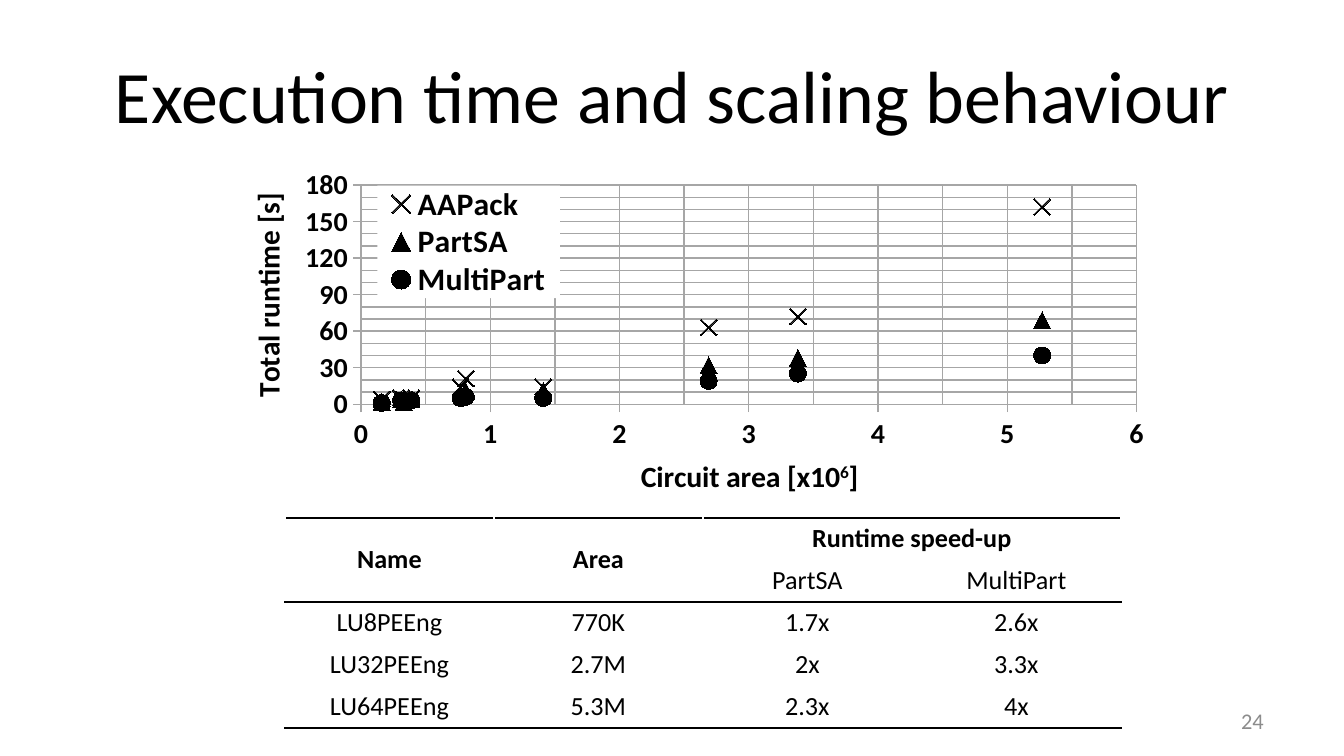
from copy import deepcopy
from dataclasses import dataclass

from lxml.etree import SubElement
from pptx import Presentation
from pptx.chart.data import XyChartData
from pptx.dml.color import RGBColor
from pptx.enum.chart import XL_CHART_TYPE as ChartType, XL_LEGEND_POSITION as LegendPosition
from pptx.enum.chart import XL_MARKER_STYLE as MarkerStyle
from pptx.enum.text import MSO_ANCHOR as Anchor, PP_ALIGN as Align
from pptx.oxml import parse_xml
from pptx.oxml.ns import nsdecls, qn
from pptx.util import Emu, Pt


@dataclass(frozen=True)
class Theme:
    """Colours, font and type sizes of the slide."""

    font: str = "Calibri"
    ink: str = "000000"
    paper: str = "FFFFFF"
    muted: str = "8C8C8C"
    grid: str = "A6A6A6"
    title: float = 39.6
    page: int = 12
    table: int = 14
    ticks: int = 15
    axis_title: int = 16
    legend: int = 17
    marker: int = 9
    grid_width: float = 0.75
    rule_width: int = 1


THEME = Theme()
AREAS = [0.16, 0.31, 0.33, 0.39, 0.77, 0.81, 1.41, 2.69, 3.38, 5.27]
RUNTIMES = [
    ("AAPack", MarkerStyle.X, [4, 5, 4, 5, 14, 21, 14, 63, 72, 162]),
    ("PartSA", MarkerStyle.TRIANGLE, [2, 4, 2, 4, 9, 11, 11, 32, 38, 69]),
    ("MultiPart", MarkerStyle.CIRCLE, [1, 3, 2, 3, 5, 6, 5, 19, 25, 40]),
]
SPEEDUPS = [
    ["Name", "Area", "Runtime speed-up", ""],
    ["", "", "PartSA", "MultiPart"],
    ["LU8PEEng", "770K", "1.7x", "2.6x"],
    ["LU32PEEng", "2.7M", "2x", "3.3x"],
    ["LU64PEEng", "5.3M", "2.3x", "4x"],
]


def px(length):
    """Turn pixels into EMU."""
    return Emu(round(length * 914400 / 134.4))


def style_font(font, size, color=THEME.ink, bold=False):
    """Apply the theme font with a size, colour and weight."""
    font.name = THEME.font
    font.size = Pt(size)
    font.bold = bold
    font.color.rgb = RGBColor.from_string(color)


def write(text_frame, text, size, align, color=THEME.ink, bold=False):
    """Fill a text frame with one styled paragraph."""
    text_frame.text = text
    paragraph = text_frame.paragraphs[0]
    paragraph.alignment = align
    for run in paragraph.runs:
        style_font(run.font, size, color, bold)


def add_text(slide, box, text, size, align, color=THEME.ink):
    """Add a vertically centred text box."""
    text_frame = slide.shapes.add_textbox(*map(px, box)).text_frame
    text_frame.word_wrap = True
    text_frame.vertical_anchor = Anchor.MIDDLE
    write(text_frame, text, size, align, color)


def set_layout(element, index, inner=False, **fractions):
    """Place a chart part by fractions of the chart area."""
    for old_layout in element.findall(qn("c:layout")):
        element.remove(old_layout)
    layout = parse_xml(f"<c:layout {nsdecls('c')}><c:manualLayout/></c:layout>")
    manual = layout[0]
    if inner:
        SubElement(manual, qn("c:layoutTarget")).set("val", "inner")
    for name in ("xMode", "yMode"):
        SubElement(manual, qn(f"c:{name}")).set("val", "edge")
    for name, value in fractions.items():
        SubElement(manual, qn(f"c:{name}")).set("val", str(value))
    element.insert(index, layout)


def style_line(line, color=THEME.grid):
    """Give a chart line the grid weight and a colour."""
    line.width = Pt(THEME.grid_width)
    line.color.rgb = RGBColor.from_string(color)


def style_axis(axis, title, maximum, major, minor, x, y, superscript=""):
    """Set scale, gridlines, labels and title of an axis."""
    axis.minimum_scale, axis.maximum_scale = 0, maximum
    axis.major_unit, axis.minor_unit = major, minor
    axis.has_major_gridlines = axis.has_minor_gridlines = True
    for part in (axis, axis.major_gridlines):
        style_line(part.format.line)
    grid_style = axis._element.find(qn("c:majorGridlines")).find(qn("c:spPr"))
    axis._element.find(qn("c:minorGridlines")).append(deepcopy(grid_style))
    axis.tick_labels.number_format = "#,##0"
    axis.tick_labels.number_format_is_linked = False
    style_font(axis.tick_labels.font, THEME.ticks, bold=True)
    text_frame = axis.axis_title.text_frame
    write(text_frame, title, THEME.axis_title, Align.CENTER, bold=True)
    if superscript:
        paragraph = text_frame.paragraphs[0]
        for text, baseline in ((superscript, "30000"), ("]", "0")):
            run = paragraph.add_run()
            run.text = text
            style_font(run.font, THEME.axis_title, bold=True)
            run._r.get_or_add_rPr().set("baseline", baseline)
    set_layout(axis.axis_title._element, 1, x=x, y=y)


def style_legend(chart):
    """Lay a white legend over the plot."""
    chart.has_legend = True
    legend = chart.legend
    legend.position = LegendPosition.RIGHT
    legend.include_in_layout = True
    style_font(legend.font, THEME.legend, bold=True)
    set_layout(legend._element, 1, x=0.17, y=0.06, w=0.19, h=0.34)
    legend._element.find(qn("c:txPr")).addprevious(parse_xml(
        f"<c:spPr {nsdecls('c', 'a')}><a:solidFill>"
        f'<a:srgbClr val="{THEME.paper}"/></a:solidFill></c:spPr>'))


def add_runtime_chart(slide, box):
    """Add the scatter chart of runtime against circuit area."""
    data = XyChartData()
    for name, _, runtimes in RUNTIMES:
        series = data.add_series(name)
        for area, runtime in zip(AREAS, runtimes):
            series.add_data_point(area, runtime)
    chart = slide.shapes.add_chart(ChartType.XY_SCATTER, *map(px, box), data).chart
    chart.has_title = False
    style_font(chart.font, 10, bold=True)
    plot = chart.plots[0]
    plot.vary_by_categories = False
    for series, (_, marker_style, _) in zip(plot.series, RUNTIMES):
        series.format.line.fill.background()
        series.marker.style = marker_style
        series.marker.size = THEME.marker
        series.marker.format.fill.solid()
        series.marker.format.fill.fore_color.rgb = RGBColor.from_string(THEME.ink)
        style_line(series.marker.format.line, THEME.ink)
    style_axis(chart.category_axis, "Circuit area [x10", 6, 1, 0.5, 0.44, 0.87, "6")
    style_axis(chart.value_axis, "Total runtime [s]", 180, 30, 10, 0.03, 0.08)
    style_legend(chart)
    plot_area = chart._chartSpace.chart.plotArea
    set_layout(plot_area, 0, inner=True, x=0.153, y=0.061, w=0.807, h=0.662)


def add_rule(cell, side):
    """Draw a rule on the top (T) or bottom (B) of a cell."""
    cell._tc.get_or_add_tcPr().insert(0, parse_xml(
        f'<a:ln{side} {nsdecls("a")} w="{Pt(THEME.rule_width)}"><a:solidFill>'
        f'<a:srgbClr val="{THEME.ink}"/></a:solidFill></a:ln{side}>'))


def add_speedup_table(slide, box):
    """Add the speed-up table with its merged header."""
    rows, columns = len(SPEEDUPS), len(SPEEDUPS[0])
    table = slide.shapes.add_table(rows, columns, *map(px, box)).table
    table.first_row = table.horz_banding = False
    for first, last in (((0, 0), (1, 0)), ((0, 1), (1, 1)), ((0, 2), (0, 3))):
        table.cell(*first).merge(table.cell(*last))
    for row, texts in enumerate(SPEEDUPS):
        for column, text in enumerate(texts):
            cell = table.cell(row, column)
            cell.fill.background()
            cell.vertical_anchor = Anchor.MIDDLE
            cell.margin_top = cell.margin_bottom = px(5)
            if not cell.is_spanned:
                write(cell.text_frame, text, THEME.table, Align.CENTER, bold=row == 0)
            if row in (1, rows - 1) or (row == 0 and column < 2):
                add_rule(cell, "B")
            if row in (0, 2):
                add_rule(cell, "T")


def main():
    """Build and save the slide."""
    presentation = Presentation()
    presentation.slide_width, presentation.slide_height = px(1344), px(756)
    slide = presentation.slides.add_slide(presentation.slide_layouts[6])
    add_text(slide, (67, 31, 1210, 126), "Execution time and scaling behaviour",
             THEME.title, Align.CENTER)
    add_runtime_chart(slide, (214, 165, 961, 337))
    add_speedup_table(slide, (285, 518, 836, 210))
    add_text(slide, (964, 701, 313, 40), "24", THEME.page, Align.RIGHT, THEME.muted)
    presentation.save("out.pptx")


if __name__ == "__main__":
    main()
